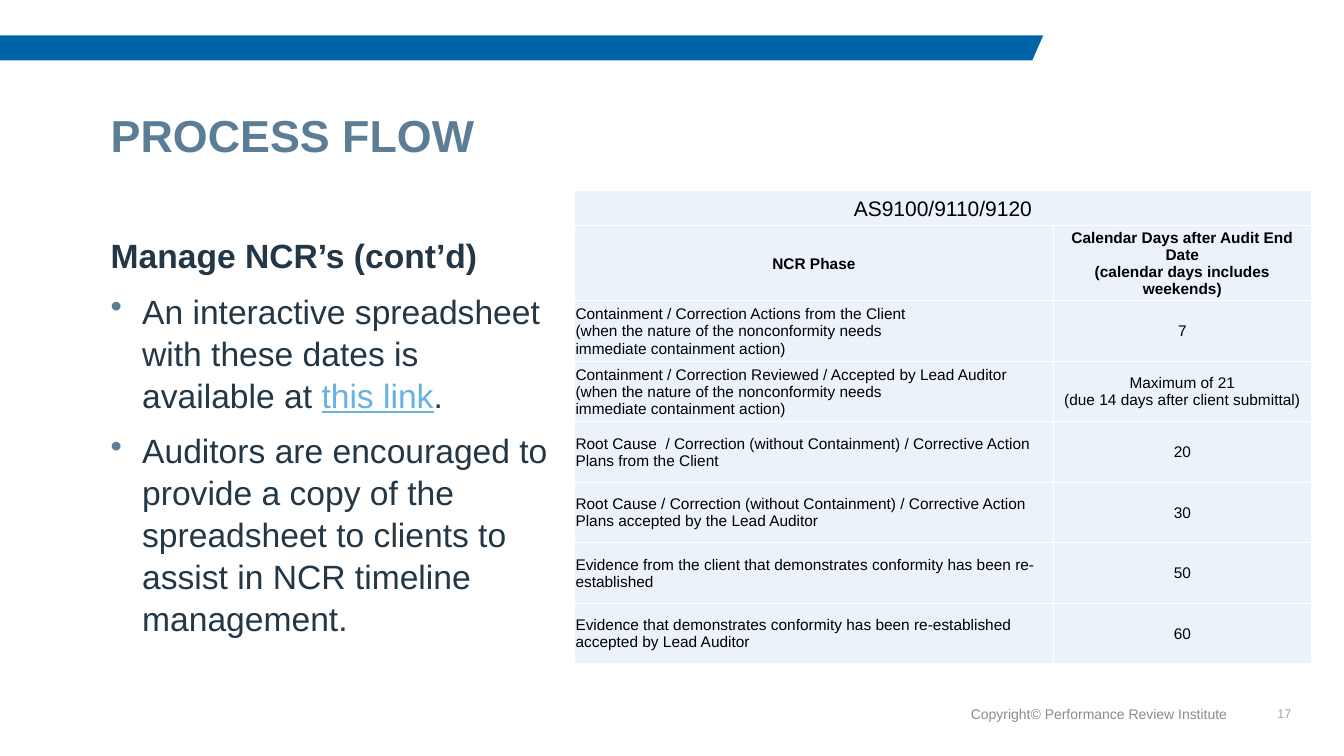
from copy import deepcopy
from dataclasses import dataclass
from lxml import etree
from pptx import Presentation
from pptx import util as u
from pptx.dml.color import RGBColor
from pptx.enum import text
from pptx.oxml import ns

Pt = u.Pt
LEFT, MID, RIGHT = text.PP_ALIGN.LEFT, text.PP_ALIGN.CENTER, text.PP_ALIGN.RIGHT
TOP, CENTER, BOTTOM = (text.MSO_ANCHOR.TOP, text.MSO_ANCHOR.MIDDLE,
                       text.MSO_ANCHOR.BOTTOM)


@dataclass
class Theme:
    font: str = "Arial"
    bar: str = "0064A8"
    title: str = "5B7E96"
    body: str = "243746"
    link: str = "68B1E2"
    foot: str = "8C8C8C"
    page: str = "A5A5A5"
    ink: str = "000000"
    cell: str = "EBF2FA"
    rule: str = "FFFFFF"
    head: float = 32
    main: float = 24
    band: float = 15
    grid: float = 11
    note: float = 10
    tiny: float = 9


def apply(item, values):
    for name, value in values.items():
        setattr(item, name, value)


def add(parent, tag, **values):
    return etree.SubElement(parent, ns.qn(tag), values)


class Deck:
    def __init__(self, theme):
        self.theme = theme
        self.file = Presentation()
        apply(self.file, {"slide_width": Pt(960), "slide_height": Pt(540)})
        self.slide = self.file.slides.add_slide(self.file.slide_layouts[6])

    def style(self, run, size, color, **more):
        apply(run.font, {"name": self.theme.font, "size": Pt(size), **more})
        run.font.color.rgb = RGBColor.from_string(color)

    def shape(self, points, color):
        start, *rest = [(Pt(x), Pt(y)) for x, y in points]
        maker = self.slide.shapes.build_freeform(*start)
        maker.add_line_segments(rest, close=True)
        form = maker.convert_to_shape()
        form.shadow.inherit = False
        form.fill.solid()
        form.fill.fore_color.rgb = RGBColor.from_string(color)
        form.line.fill.background()

    def box(self, x, y, w, h, anchor=TOP, top=3.6):
        frame = self.slide.shapes.add_textbox(Pt(x), Pt(y), Pt(w), Pt(h)).text_frame
        apply(frame, {"word_wrap": True, "vertical_anchor": anchor,
                      "margin_top": Pt(top)})
        return frame

    def label(self, words, spot, size, color, align=LEFT, space=None, bold=False,
              **more):
        para = self.box(*spot, **more).paragraphs[0]
        apply(para, {"alignment": align, "line_spacing": space})
        run = para.add_run()
        run.text = words
        self.style(run, size, color, bold=bold)

    def bullet(self, para):
        props = para._p.get_or_add_pPr()
        props.set("marL", str(Pt(22.5)))
        props.set("indent", str(Pt(-22.5)))
        add(add(props, "a:buClr"), "a:srgbClr", val=self.theme.title)
        add(props, "a:buChar", char="•")

    def points(self, head, items, spot):
        look = self.theme
        frame = self.box(*spot, top=4.5)
        for index, parts in enumerate([[head], *items]):
            para = frame.add_paragraph() if index else frame.paragraphs[0]
            if index:
                self.bullet(para)
                para.space_before = Pt(10)
            para.line_spacing = 1.04
            for turn, words in enumerate(parts):
                run = para.add_run()
                run.text = words
                link = turn == 1
                self.style(run, look.main, look.link if link else look.body,
                           bold=index == 0, underline=link)

    def cell(self, cell, words, size, align, bold, anchor, pads):
        look = self.theme
        sides = ("margin_left", "margin_top", "margin_right", "margin_bottom")
        apply(cell, {"vertical_anchor": anchor,
                     **{side: Pt(pad) for side, pad in zip(sides, pads)}})
        cell.fill.solid()
        cell.fill.fore_color.rgb = RGBColor.from_string(look.cell)
        props = cell._tc.get_or_add_tcPr()
        for index, side in enumerate("LRTB"):
            line = add(props, "a:ln" + side, w=str(Pt(1)))
            add(add(line, "a:solidFill"), "a:srgbClr", val=look.rule)
            props.insert(index, line)
        para = cell.text_frame.paragraphs[0]
        apply(para, {"text": words, "alignment": align})
        for run in para.runs:
            self.style(run, size, look.ink, bold=bold)
        for gap in para._p.findall(ns.qn("a:br")):
            gap.insert(0, deepcopy(para.runs[0]._r.rPr))

    def table(self, band, rows, spot, widths, heights):
        look = self.theme
        frame = self.slide.shapes.add_table(len(rows) + 1, len(widths),
                                            *map(Pt, spot))
        grid = frame.table
        apply(grid, {"first_row": False, "horz_banding": False})
        for col, width in zip(grid.columns, widths):
            col.width = Pt(width)
        for row, height in zip(grid.rows, heights):
            row.height = Pt(height)
        grid.cell(0, 0).merge(grid.cell(0, 1))
        self.cell(grid.cell(0, 0), band, look.band, MID, False, BOTTOM,
                  (7.2, 3.6, 7.2, 3.6))
        for r, row in enumerate(rows, 1):
            for c, words in enumerate(row):
                align = LEFT if r > 1 and c == 0 else MID
                self.cell(grid.cell(r, c), words, look.grid, align, r == 1,
                          CENTER, (0.7, 0.7, 0.7, 0))


ITEMS = [
    ["An interactive spreadsheet with these dates is available at ",
     "this link", "."],
    ["Auditors are encouraged to provide a copy of the spreadsheet to clients "
     "to assist in NCR timeline management."],
]
NEED = "\v(when the nature of the nonconformity needs\vimmediate containment action)"
PLAN = "/ Correction (without Containment) / Corrective Action Plans"
ROWS = [
    ("NCR Phase",
     "Calendar Days after Audit End Date\v(calendar days includes weekends)"),
    ("Containment / Correction Actions from the Client" + NEED, "7"),
    ("Containment / Correction Reviewed / Accepted by Lead Auditor" + NEED,
     "Maximum of 21\v(due 14 days after client submittal)"),
    (f"Root Cause  {PLAN} from the Client", "20"),
    (f"Root Cause {PLAN} accepted by the Lead Auditor", "30"),
    ("Evidence from the client that demonstrates conformity has been "
     "re-established", "50"),
    ("Evidence that demonstrates conformity has been re-established "
     "accepted by Lead Auditor", "60"),
]


def main():
    look = Theme()
    deck = Deck(look)
    deck.shape([(0, 25.2), (745.2, 25.2), (737.3, 43.2), (0, 43.2)], look.bar)
    deck.points("Manage NCR’s (cont’d)", ITEMS, (72, 162, 329, 303))
    deck.label("PROCESS FLOW", (72, 75, 816, 39.6), look.head, look.title,
               space=0.9, bold=True, top=6)
    deck.label("Copyright© Performance Review Institute",
               (684, 502.6, 199.4, 14.4), look.note, look.foot, RIGHT,
               anchor=CENTER)
    deck.label("17", (889.2, 502.6, 40.3, 14.4), look.tiny, look.page, RIGHT,
               anchor=CENTER)
    deck.table("AS9100/9110/9120", ROWS, (410.4, 136.1, 526.3, 337.7),
               (342, 184.3), [20.2, 25.9] + [43.2] * 6)
    deck.file.save("out.pptx")


if __name__ == "__main__":
    main()
